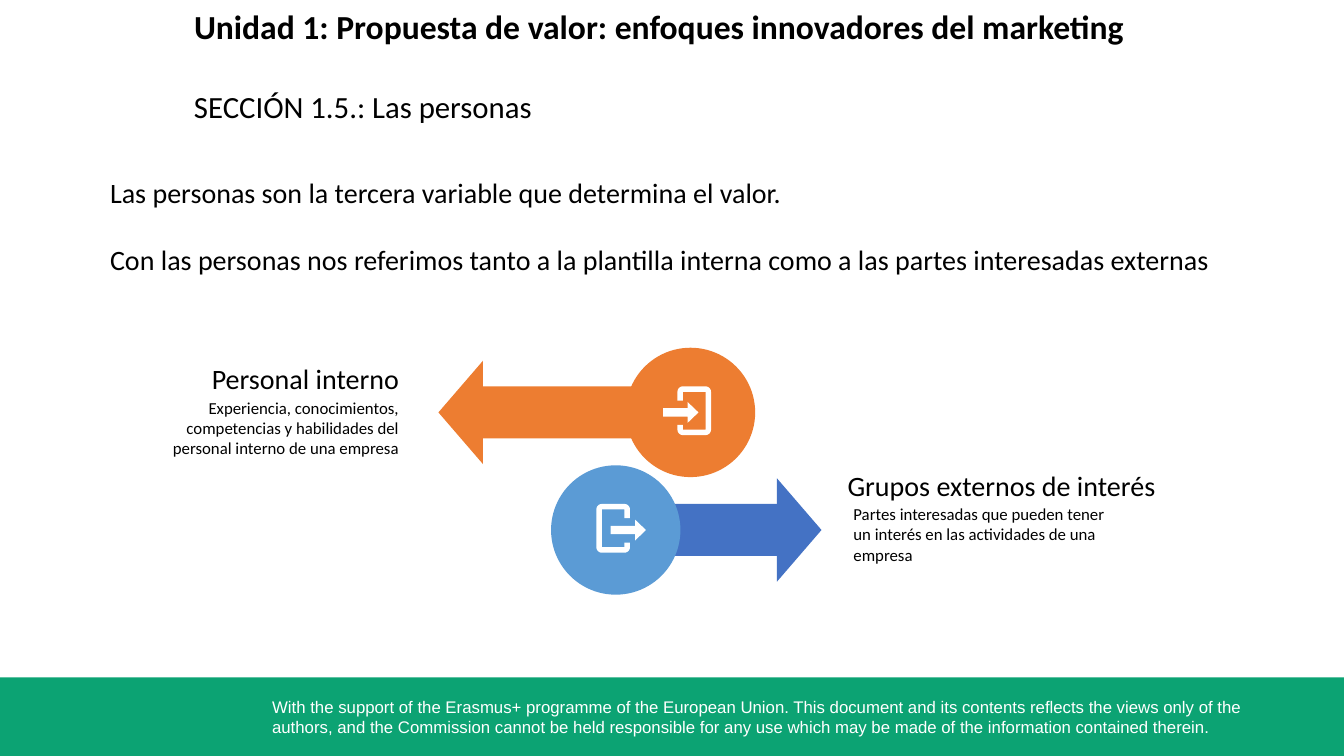
from dataclasses import dataclass
from math import cos, radians, sin

from pptx import Presentation
from pptx.dml.color import RGBColor
from pptx.enum.shapes import MSO_SHAPE
from pptx.enum.text import PP_ALIGN
from pptx.util import Inches, Pt

RECT, OVAL = MSO_SHAPE.RECTANGLE, MSO_SHAPE.OVAL
LEFT, RIGHT = PP_ALIGN.LEFT, PP_ALIGN.RIGHT
INK = {"green": "0CA373", "orange": "ED7D31", "navy": "4472C4",
       "sky": "5B9BD5", "white": "FFFFFF", "black": "000000"}

# Grid of 160 columns by 90 rows
COLS, ROWS = 160, 90
deck = Presentation()
deck.slide_width, deck.slide_height = Inches(13.33), Inches(7.5)
slide = deck.slides.add_slide(deck.slide_layouts[6])
shapes = slide.shapes

BAR, HEAD, DEEP, DISC = 6.2, 12.3, 5.3, 15.4  # bar, arrowhead and disc sizes
WIDE, TOP, LOW, WALL = 4, -3.1, 2.7, 0.65     # door frame of the icons

Point = tuple[float, float]


@dataclass
class Label:
    x: float
    y: float
    w: float
    h: float
    lines: list[str]
    size: float
    font: str = "Calibri"
    color: str = "black"
    bold: bool = False
    align: PP_ALIGN = LEFT
    pad: float = 1.2  # side inset; top and bottom take half of it
    gap: float = 0    # points between paragraphs


@dataclass
class Lane:
    mid: float    # row of the arrow's axis
    hub: float    # column of the disc's centre
    base: float   # column where the arrowhead starts
    way: int      # 1 points right, -1 left
    arrow: str
    disc: str
    door: float   # open edge of the door, from the hub
    side: int     # 1 door extends right, -1 left
    tail: float   # start of the small arrow, from the hub


def col(x: float) -> int:
    return round(deck.slide_width * x / COLS)


def row(y: float) -> int:
    return round(deck.slide_height * y / ROWS)


def paint(shape, color: str) -> None:
    shape.shadow.inherit = False
    shape.fill.solid()
    shape.fill.fore_color.rgb = RGBColor.from_string(INK[color])
    shape.line.fill.background()


def block(kind: MSO_SHAPE, x: float, y: float, w: float, h: float,
          color: str) -> None:
    paint(shapes.add_shape(kind, col(x), row(y), col(w), row(h)), color)


def outline(points: list[Point], color: str) -> None:
    spots = [(col(x), row(y)) for x, y in points]
    pen = shapes.build_freeform(*spots[0], scale=1.0)
    pen.add_line_segments(spots[1:], close=True)
    paint(pen.convert_to_shape(), color)


def write(label: Label) -> None:
    box = shapes.add_textbox(col(label.x), row(label.y),
                             col(label.w), row(label.h))
    frame = box.text_frame
    frame.word_wrap = True
    frame.margin_left = frame.margin_right = col(label.pad)
    frame.margin_top = frame.margin_bottom = row(label.pad / 2)
    for i, line in enumerate(label.lines):
        para = frame.add_paragraph() if i else frame.paragraphs[0]
        para.alignment = label.align
        if i:
            para.space_before = Pt(label.gap)
        run = para.add_run()
        run.text = line
        run.font.name, run.font.size = label.font, Pt(label.size)
        run.font.bold = label.bold
        run.font.color.rgb = RGBColor.from_string(INK[label.color])


def curve(x: float, y: float, start: int) -> list[Point]:
    return [(x + WALL * cos(radians(start + turn)),
             y + WALL * sin(radians(start + turn)))
            for turn in range(0, 91, 15)]


def frame_points() -> list[Point]:
    near, far = WALL, WIDE - WALL
    high, deep = TOP + WALL, LOW - WALL
    return [(near, -1.4), (0, -1.4),
            *curve(near, high, 180), *curve(far, high, 270),
            *curve(far, deep, 0), *curve(near, deep, 90),
            (0, 1.5), (near, 1.5), (near, deep), (far, deep),
            (far, high), (near, high)]


def icon(lane: Lane) -> None:
    edge = lane.hub + lane.door
    outline([(edge + lane.side * x, lane.mid + y) for x, y in frame_points()],
            "white")
    tail = lane.hub + lane.tail
    neck, tip = tail + 2.9, tail + 4.2
    half = [(tail, 0.5), (neck, 0.5), (neck, 1.25)]
    outline([(x, lane.mid - y) for x, y in half] + [(tip, lane.mid)]
            + [(x, lane.mid + y) for x, y in reversed(half)], "white")


def draw(lane: Lane) -> None:
    start, end = sorted((lane.hub, lane.base))
    block(RECT, start, lane.mid - BAR / 2, end - start, BAR, lane.arrow)
    outline([(lane.base, lane.mid - HEAD / 2),
             (lane.base + lane.way * DEEP, lane.mid),
             (lane.base, lane.mid + HEAD / 2)], lane.arrow)
    block(OVAL, lane.hub - DISC / 2, lane.mid - DISC / 2, DISC, DISC, lane.disc)
    icon(lane)


# Footer band
block(RECT, 0, 80.65, COLS, ROWS - 80.65, "green")

# Opposite arrows with their discs
LANES = [
    Lane(49.1, 82.2, 57.5, -1, "orange", "orange", -1.55, 1, -3.25),
    Lane(63.1, 73.3, 92.5, 1, "navy", "sky", 1.7, -1, -0.6),
]
for lane in LANES:
    draw(lane)

# Headings, body, arrow captions and footer text
LABELS = [
    Label(23.1, 0.7, 136, 5,
          ["Unidad 1: Propuesta de valor: enfoques innovadores del marketing"],
          24, bold=True, pad=0),
    Label(23.1, 10.5, 125, 4.6, ["SECCIÓN 1.5.: Las personas"], 22, pad=0),
    Label(11.9, 20.3, 134.2, 13.3,
          ["Las personas son la tercera variable que determina el valor.",
           "Con las personas nos referimos tanto a la plantilla interna "
           "como a las partes interesadas externas"], 20, gap=24),
    Label(15.5, 42.4, 33.2, 5.3, ["Personal interno"], 20, align=RIGHT),
    Label(16.4, 46.7, 32.3, 8.5,
          ["Experiencia, conocimientos, competencias y habilidades del "
           "personal interno de una empresa"], 12, align=RIGHT),
    Label(99.7, 55.2, 41.5, 5.3, ["Grupos externos de interés"], 20),
    Label(100.4, 59.4, 33.8, 8.5,
          ["Partes interesadas que pueden tener un interés en las "
           "actividades de una empresa"], 12),
    Label(31.2, 82.3, 125, 6,
          ["With the support of the Erasmus+ programme of the European Union. "
           "This document and its contents reflects the views only of the "
           "authors, and the Commission cannot be held responsible for any "
           "use which may be made of the information contained therein."],
          12, font="Arial", color="white"),
]
for label in LABELS:
    write(label)

deck.save("out.pptx")
